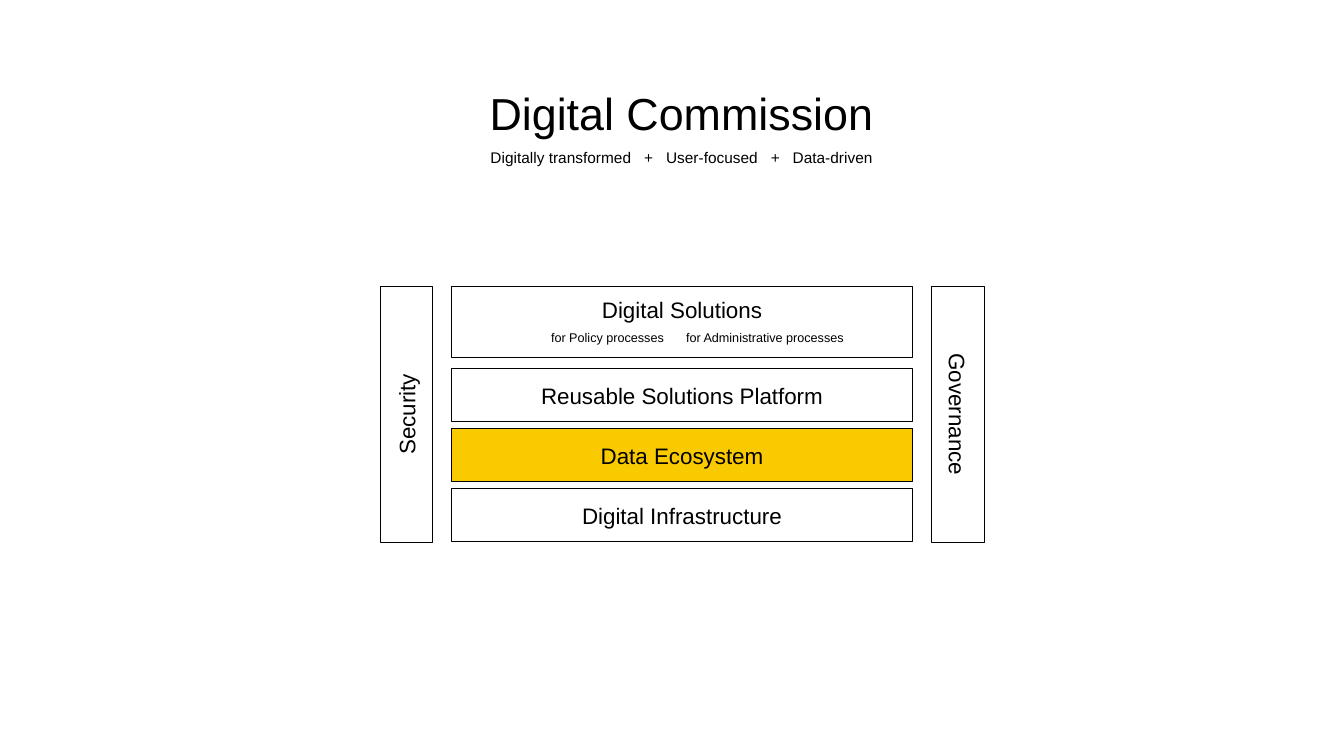
from dataclasses import dataclass

from pptx import Presentation
from pptx.dml.color import RGBColor
from pptx.enum.shapes import MSO_SHAPE
from pptx.enum.text import MSO_ANCHOR, MSO_AUTO_SIZE, PP_ALIGN
from pptx.util import Inches, Pt


@dataclass(frozen=True)
class Theme:
    font: str = "Arial"
    ink: RGBColor = RGBColor(0, 0, 0)
    highlight: RGBColor = RGBColor(0xFA, 0xCA, 0x00)
    title: Pt = Pt(32)
    subtitle: Pt = Pt(11)
    block: Pt = Pt(16)
    note: Pt = Pt(9)
    outline: Pt = Pt(0.75)
    separator_tracking: Pt = Pt(6.1)


THEME = Theme()


def apply(target, values):
    for name, value in values.items():
        setattr(target, name, value)


def style_paragraph(paragraph, size):
    paragraph.alignment = PP_ALIGN.CENTER
    apply(paragraph.font, {"name": THEME.font, "size": size})
    paragraph.font.color.rgb = THEME.ink


def add_block(slide, label, left, top, width, height, fill=None, rotation=0, frame_format=None):
    block = slide.shapes.add_shape(
        MSO_SHAPE.RECTANGLE, Inches(left), Inches(top), Inches(width), Inches(height)
    )
    block.shadow.inherit = False
    block.rotation = rotation
    if fill is None:
        block.fill.background()
    else:
        block.fill.solid()
        block.fill.fore_color.rgb = fill
    block.line.color.rgb = THEME.ink
    block.line.width = THEME.outline
    apply(block.text_frame, {"vertical_anchor": MSO_ANCHOR.MIDDLE, "word_wrap": True})
    apply(block.text_frame, frame_format or {})
    paragraph = block.text_frame.paragraphs[0]
    paragraph.text = label
    style_paragraph(paragraph, THEME.block)


def add_note(slide, text, left, width):
    note = slide.shapes.add_textbox(Inches(left), Inches(3.22), Inches(width), Inches(0.25))
    apply(note.text_frame, {"word_wrap": False, "auto_size": MSO_AUTO_SIZE.SHAPE_TO_FIT_TEXT})
    paragraph = note.text_frame.paragraphs[0]
    paragraph.text = text
    style_paragraph(paragraph, THEME.note)


def add_heading(slide, title_text, qualities):
    heading = slide.shapes.add_textbox(Inches(3.06), Inches(0.65), Inches(7.4), Inches(1.21))
    frame = heading.text_frame
    apply(frame, {"word_wrap": True, "vertical_anchor": MSO_ANCHOR.MIDDLE})
    title = frame.paragraphs[0]
    title.text = title_text
    subtitle = frame.add_paragraph()
    subtitle.add_run().text = qualities[0]
    for quality in qualities[1:]:
        separator = subtitle.add_run()
        separator.text = " +"
        tracking = round(THEME.separator_tracking.pt * 100)
        separator._r.get_or_add_rPr().set("spc", str(tracking))
        subtitle.add_run().text = f" {quality}"
    for paragraph, size in ((title, THEME.title), (subtitle, THEME.subtitle)):
        style_paragraph(paragraph, size)
        paragraph.space_after = Pt(6)


def main():
    presentation = Presentation()
    apply(presentation, {"slide_width": Inches(13.33), "slide_height": Inches(7.5)})
    slide = presentation.slides.add_slide(presentation.slide_layouts[6])

    add_heading(slide, "Digital Commission", ["Digitally transformed", "User-focused", "Data-driven"])

    layer_left, layer_width, thickness = 4.48, 4.57, 0.52
    add_block(
        slide, "Digital Solutions", layer_left, 2.84, layer_width, 0.71,
        frame_format={"vertical_anchor": MSO_ANCHOR.TOP, "margin_top": Inches(0.1)},
    )
    layers = [
        ("Reusable Solutions Platform", None),
        ("Data Ecosystem", THEME.highlight),
        ("Digital Infrastructure", None),
    ]
    first_top, last_top = 3.66, 4.85
    pitch = (last_top - first_top) / (len(layers) - 1)
    for index, (label, fill) in enumerate(layers):
        add_block(slide, label, layer_left, first_top + index * pitch, layer_width, thickness, fill)

    for label, left, rotation in (("Security", 2.76, 270), ("Governance", 8.23, 90)):
        add_block(slide, label, left, 3.85, 2.54, thickness, rotation=rotation)

    add_note(slide, "for Policy processes", 5.36, 1.33)
    add_note(slide, "for Administrative processes", 6.69, 1.79)

    presentation.save("out.pptx")


if __name__ == "__main__":
    main()
